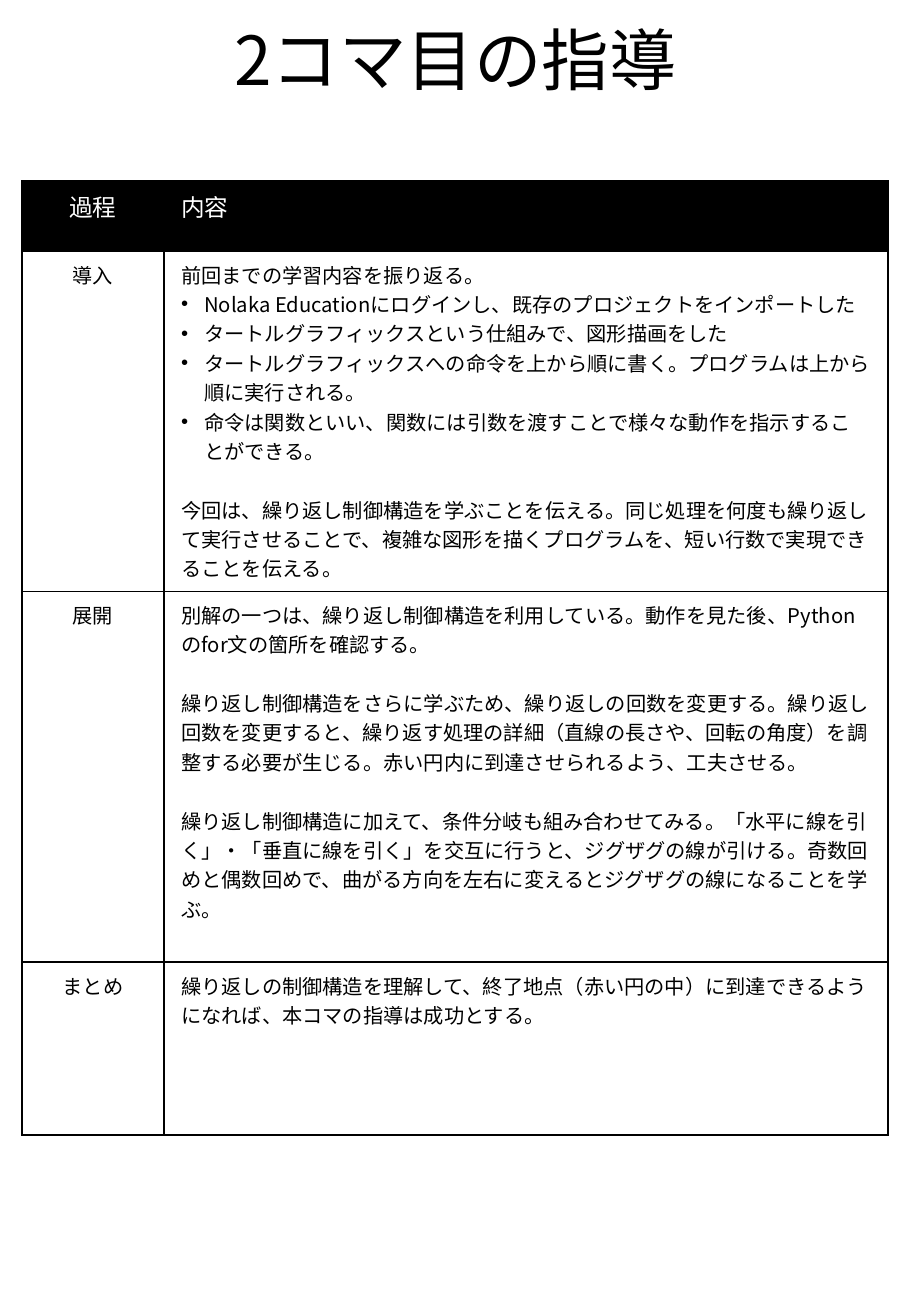
from lxml import etree
from pptx import Presentation
from pptx.dml.color import RGBColor
from pptx.enum import text
from pptx.oxml import ns
from pptx.util import Cm, Pt

FONT = "Noto Sans CJK JP"
BLACK = RGBColor(0, 0, 0)
WHITE = RGBColor(255, 255, 255)
BULLET_INDENT = Cm(0.48)
SECTION_GAP = Pt(17.4)

# Each passage is (style, text); "gap" leaves one line of space above it
LESSON = [
    ("過程", [("plain", "内容")]),
    ("導入", [
        ("plain", "前回までの学習内容を振り返る。"),
        ("bullet", "Nolaka Educationにログインし、既存のプロジェクトをインポートした"),
        ("bullet", "タートルグラフィックスという仕組みで、図形描画をした"),
        ("bullet", "タートルグラフィックスへの命令を上から順に書く。プログラムは上から順に実行される。"),
        ("bullet", "命令は関数といい、関数には引数を渡すことで様々な動作を指示することができる。"),
        ("gap", "今回は、繰り返し制御構造を学ぶことを伝える。同じ処理を何度も繰り返して実行させることで、"
                "複雑な図形を描くプログラムを、短い行数で実現できることを伝える。"),
    ]),
    ("展開", [
        ("plain", "別解の一つは、繰り返し制御構造を利用している。動作を見た後、Pythonのfor文の箇所を確認する。"),
        ("gap", "繰り返し制御構造をさらに学ぶため、繰り返しの回数を変更する。繰り返し回数を変更すると、"
                "繰り返す処理の詳細（直線の長さや、回転の角度）を調整する必要が生じる。"
                "赤い円内に到達させられるよう、工夫させる。"),
        ("gap", "繰り返し制御構造に加えて、条件分岐も組み合わせてみる。「水平に線を引く」・「垂直に線を引く」を"
                "交互に行うと、ジグザグの線が引ける。奇数回めと偶数回めで、曲がる方向を左右に変えると"
                "ジグザグの線になることを学ぶ。"),
    ]),
    ("まとめ", [
        ("plain", "繰り返しの制御構造を理解して、終了地点（赤い円の中）に到達できるようになれば、"
                  "本コマの指導は成功とする。"),
    ]),
]
COLUMN_WIDTHS = [Cm(2.97), Cm(15.14)]
ROW_HEIGHTS = [Cm(1.47), Cm(7.11), Cm(7.75), Cm(3.61)]


def format_paragraph(paragraph, size, color, align):
    paragraph.alignment = align
    for run in paragraph.runs:
        run.font.size = Pt(size)
        run.font.bold = False
        run.font.color.rgb = color
        run.font.name = FONT
        latin = run.font._element.find(ns.qn("a:latin"))
        east_asian = etree.Element(ns.qn("a:ea"), typeface=FONT)
        latin.addnext(east_asian)


def add_bullet(paragraph):
    properties = paragraph._p.get_or_add_pPr()
    properties.set("marL", str(BULLET_INDENT))
    properties.set("indent", str(-BULLET_INDENT))
    etree.SubElement(properties, ns.qn("a:buFont"), typeface="Arial")
    etree.SubElement(properties, ns.qn("a:buChar"), char="•")


def add_borders(cell):
    properties = cell._tc.get_or_add_tcPr()
    for side in ("lnL", "lnR", "lnT", "lnB"):
        line = etree.SubElement(properties, ns.qn(f"a:{side}"), w=str(Pt(1)))
        fill = etree.SubElement(line, ns.qn("a:solidFill"))
        etree.SubElement(fill, ns.qn("a:srgbClr"), val=str(BLACK))


def fill_cell(cell, passages, size, color, background, align):
    cell.margin_left = cell.margin_right = Cm(0.36)
    cell.margin_top = cell.margin_bottom = Cm(0.18)
    cell.vertical_anchor = text.MSO_ANCHOR.TOP
    add_borders(cell)
    cell.fill.solid()
    cell.fill.fore_color.rgb = background
    cell.text_frame.text = "\n".join(passage for _, passage in passages)
    for paragraph, (style, _) in zip(cell.text_frame.paragraphs, passages):
        format_paragraph(paragraph, size, color, align)
        if style == "gap":
            paragraph.space_before = SECTION_GAP
        elif style == "bullet":
            add_bullet(paragraph)


def place_title(slide, left, top, width, height):
    heading = slide.shapes.title
    heading.left, heading.top, heading.width, heading.height = left, top, width, height
    frame = heading.text_frame
    frame.text = "2コマ目の指導"
    frame.word_wrap = True
    frame.auto_size = text.MSO_AUTO_SIZE.NONE
    frame.vertical_anchor = text.MSO_ANCHOR.BOTTOM
    frame.paragraphs[0].line_spacing = 0.9
    format_paragraph(frame.paragraphs[0], 40, BLACK, text.PP_ALIGN.CENTER)


def place_lesson_plan(slide, left, top):
    plan = slide.shapes.add_table(len(LESSON), len(COLUMN_WIDTHS), left, top,
                                  sum(COLUMN_WIDTHS), sum(ROW_HEIGHTS)).table
    plan.first_row = plan.horz_banding = False
    for column, width in zip(plan.columns, COLUMN_WIDTHS):
        column.width = width
    for index, (stage, passages) in enumerate(LESSON):
        plan.rows[index].height = ROW_HEIGHTS[index]
        # The heading row is white on black
        look = (14, WHITE, BLACK) if index == 0 else (12, BLACK, WHITE)
        fill_cell(plan.cell(index, 0), [("plain", stage)], *look, text.PP_ALIGN.CENTER)
        fill_cell(plan.cell(index, 1), passages, *look, text.PP_ALIGN.LEFT)


def main():
    deck = Presentation()
    deck.slide_width, deck.slide_height = Cm(19.05), Cm(27.51)
    slide = deck.slides.add_slide(deck.slide_layouts[5])
    place_title(slide, Cm(1.42), Cm(0.15), Cm(16.21), Cm(2.06))
    place_lesson_plan(slide, Cm(0.46), Cm(3.78))
    deck.save("out.pptx")


if __name__ == "__main__":
    main()
